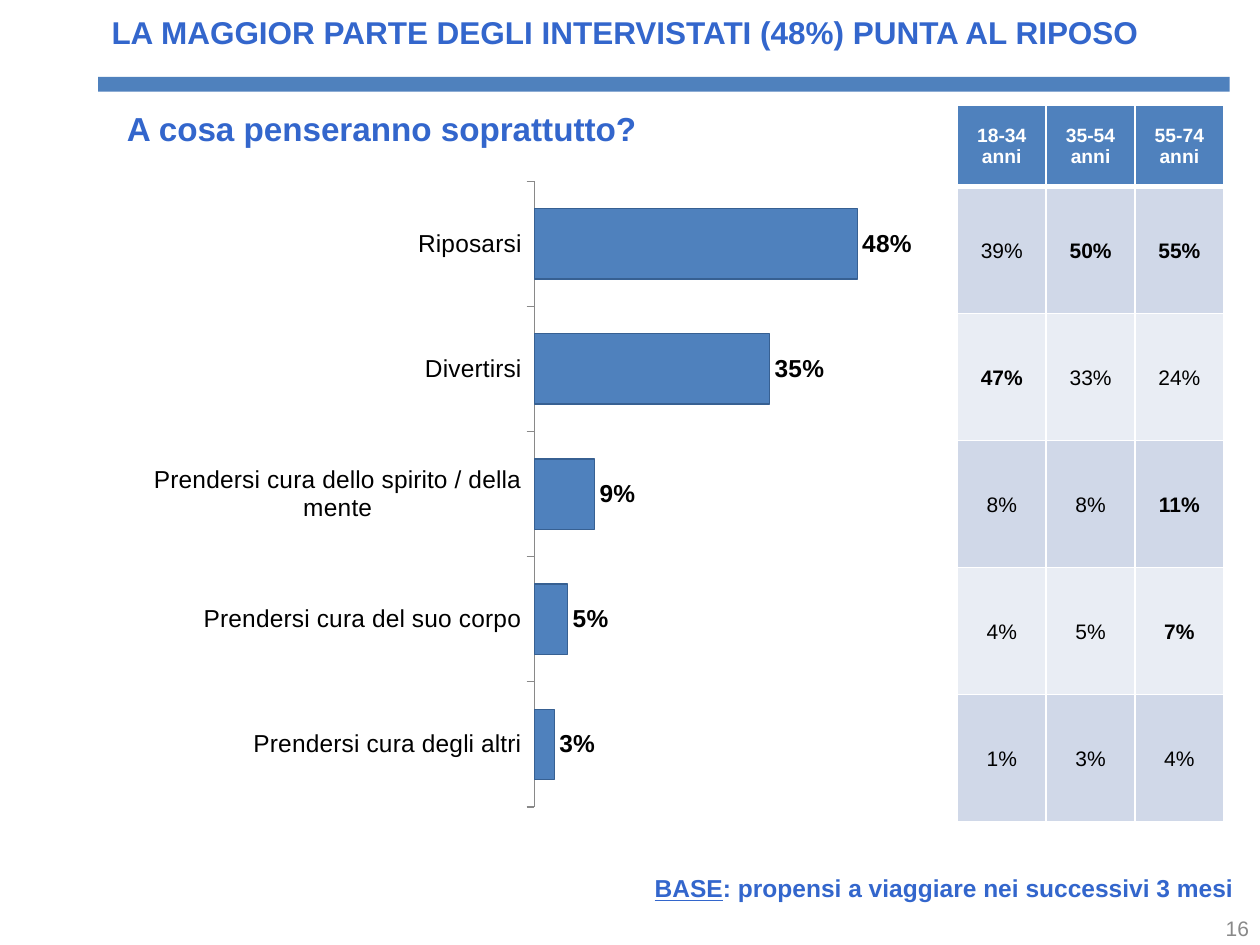
"""Build the survey slide on what holiday-makers will focus on."""
from lxml.etree import SubElement
from pptx import Presentation
from pptx.chart.data import CategoryChartData
from pptx.dml.color import RGBColor
from pptx.enum.chart import XL_CHART_TYPE, XL_LABEL_POSITION, XL_TICK_MARK
from pptx.enum.shapes import MSO_SHAPE
from pptx.enum.text import MSO_ANCHOR, PP_ALIGN
from pptx.oxml.ns import qn
from pptx.util import Cm, Pt

BLUE = RGBColor(0x4F, 0x81, 0xBD)
DARK_BLUE = RGBColor(0x37, 0x60, 0x92)
TITLE_BLUE = RGBColor(0x33, 0x66, 0xCC)
BAND_DARK = RGBColor(0xD0, 0xD8, 0xE8)
BAND_LIGHT = RGBColor(0xE9, 0xED, 0xF4)
GREY = RGBColor(0x89, 0x89, 0x89)
BLACK = RGBColor(0, 0, 0)
WHITE = RGBColor(255, 255, 255)

ANSWERS = {
    "Riposarsi": 0.48,
    "Divertirsi": 0.35,
    "Prendersi cura dello spirito / della mente": 0.09,
    "Prendersi cura del suo corpo": 0.05,
    "Prendersi cura degli altri": 0.03,
}
AGE_GROUPS = ["18-34 anni", "35-54 anni", "55-74 anni"]
AGE_SHARES = [(39, 50, 55), (47, 33, 24), (8, 8, 11), (4, 5, 7), (1, 3, 4)]
HIGHLIGHTS = {(1, 1), (1, 2), (2, 0), (3, 2), (4, 2)}


def set_font(font, size, color=BLACK, bold=False):
    font.name, font.size, font.bold = "Arial", Pt(size), bold
    font.color.rgb = color


def write(p, text, size=14, color=TITLE_BLUE, bold=True, underline=False, align=PP_ALIGN.LEFT):
    p.alignment = align
    r = p.add_run()
    r.text = text
    set_font(r.font, size, color, bold)
    r.font.underline = underline


class SlideBuilder:
    def __init__(self, s):
        self.s = s

    def text_box(self, x, y, w, h, anchor=MSO_ANCHOR.TOP):
        tf = self.s.shapes.add_textbox(Cm(x), Cm(y), Cm(w), Cm(h)).text_frame
        tf.word_wrap = True
        tf.vertical_anchor = anchor
        return tf.paragraphs[0]

    def bar(self, x, y, w, h):
        sp = self.s.shapes.add_shape(MSO_SHAPE.RECTANGLE, Cm(x), Cm(y), Cm(w), Cm(h))
        sp.shadow.inherit = False
        sp.fill.solid()
        sp.fill.fore_color.rgb = BLUE
        sp.line.fill.background()

    def chart(self, x, y, w, h, plot_area):
        data = CategoryChartData(number_format="0%")
        data.categories = list(ANSWERS)
        data.add_series("Series 1", ANSWERS.values())
        chart = self.s.shapes.add_chart(
            XL_CHART_TYPE.BAR_CLUSTERED, Cm(x), Cm(y), Cm(w), Cm(h), data).chart
        chart.has_legend = chart.has_title = False
        set_font(chart.font, 18)

        axis = chart.category_axis
        axis.reverse_order = True
        axis.major_tick_mark = XL_TICK_MARK.OUTSIDE
        axis.format.line.color.rgb = GREY
        set_font(axis.tick_labels.font, 14)
        values = chart.value_axis
        values.visible = values.has_major_gridlines = False
        values.minimum_scale, values.maximum_scale = 0, 0.6

        plot = chart.plots[0]
        plot.gap_width, plot.overlap = 78, -14
        plot.vary_by_categories = False
        series = plot.series[0]
        series.format.fill.solid()
        series.format.fill.fore_color.rgb = BLUE
        series.format.line.color.rgb = DARK_BLUE
        series.format.line.width = Pt(0.75)
        labels = series.data_labels
        labels.show_value = True
        labels.position = XL_LABEL_POSITION.OUTSIDE_END
        labels.number_format, labels.number_format_is_linked = "0%", False
        set_font(labels.font, 14, bold=True)
        self.place_plot(chart, plot_area)

    def place_plot(self, chart, plot_area):
        area = chart.element.find(".//" + qn("c:plotArea"))
        for old in area.findall(qn("c:layout")):
            area.remove(old)
        layout = SubElement(area, qn("c:layout"))
        area.insert(0, layout)
        manual = SubElement(layout, qn("c:manualLayout"))
        settings = [("layoutTarget", "inner"), ("xMode", "edge"), ("yMode", "edge")]
        for tag, value in settings + list(zip("xywh", plot_area)):
            SubElement(manual, qn(f"c:{tag}"), val=str(value))

    def table(self, x, y, col_width, header_height, row_height):
        rows = [AGE_GROUPS] + [[f"{n}%" for n in row] for row in AGE_SHARES]
        cols = len(AGE_GROUPS)
        height = header_height + row_height * len(AGE_SHARES)
        table = self.s.shapes.add_table(
            len(rows), cols, Cm(x), Cm(y), Cm(col_width * cols), Cm(height)).table
        for col in table.columns:
            col.width = Cm(col_width)
        for i, texts in enumerate(rows):
            table.rows[i].height = Cm(row_height if i else header_height)
            for j, text in enumerate(texts):
                self.cell(table.cell(i, j), text, i, (i, j) in HIGHLIGHTS)

    def cell(self, cell, text, row, highlighted):
        header = row == 0
        cell.vertical_anchor = MSO_ANCHOR.MIDDLE
        if not header:
            cell.margin_left = cell.margin_right = cell.margin_top = Cm(0.03)
            cell.margin_bottom = 0
        widths = {"L": 1, "R": 1, "T": 3 if row == 1 else 1, "B": 3 if header else 1}
        for side, width in widths.items():
            line = SubElement(cell._tc.get_or_add_tcPr(), qn(f"a:ln{side}"), w=str(Pt(width)))
            SubElement(SubElement(line, qn("a:solidFill")), qn("a:srgbClr"), val=str(WHITE))
        cell.fill.solid()
        cell.fill.fore_color.rgb = BLUE if header else BAND_DARK if row % 2 else BAND_LIGHT
        write(cell.text_frame.paragraphs[0], text, size=11 if header else 12,
              color=WHITE if header else BLACK, bold=header or highlighted,
              align=PP_ALIGN.CENTER)


def main():
    prs = Presentation()
    prs.slide_width, prs.slide_height = Cm(25.4), Cm(19.05)
    slide = SlideBuilder(prs.slides.add_slide(prs.slide_layouts[6]))
    write(slide.text_box(19.5, 18.52, 5.93, 0.4, MSO_ANCHOR.MIDDLE), "16",
          size=12, color=GREY, bold=False, align=PP_ALIGN.RIGHT)
    slide.bar(1.98, 1.55, 22.81, 0.3)
    write(slide.text_box(2, 0.13, 23.7, 1.03),
          "LA MAGGIOR PARTE DEGLI INTERVISTATI (48%) PUNTA AL RIPOSO", size=18)
    slide.chart(3.1, 3.3, 18.21, 13.61, (0.42, 0.026, 0.448, 0.927))
    write(slide.text_box(2.31, 2.06, 13.64, 1.07), "A cosa penseranno soprattutto?", size=19)
    slide.table(19.3, 2.13, 1.79, 1.63, 2.56)
    base = slide.text_box(11.91, 17.48, 13.21, 0.86)
    write(base, "BASE", underline=True, align=PP_ALIGN.RIGHT)
    write(base, ": propensi a viaggiare nei successivi 3 mesi", align=PP_ALIGN.RIGHT)
    prs.save("out.pptx")


if __name__ == "__main__":
    main()
